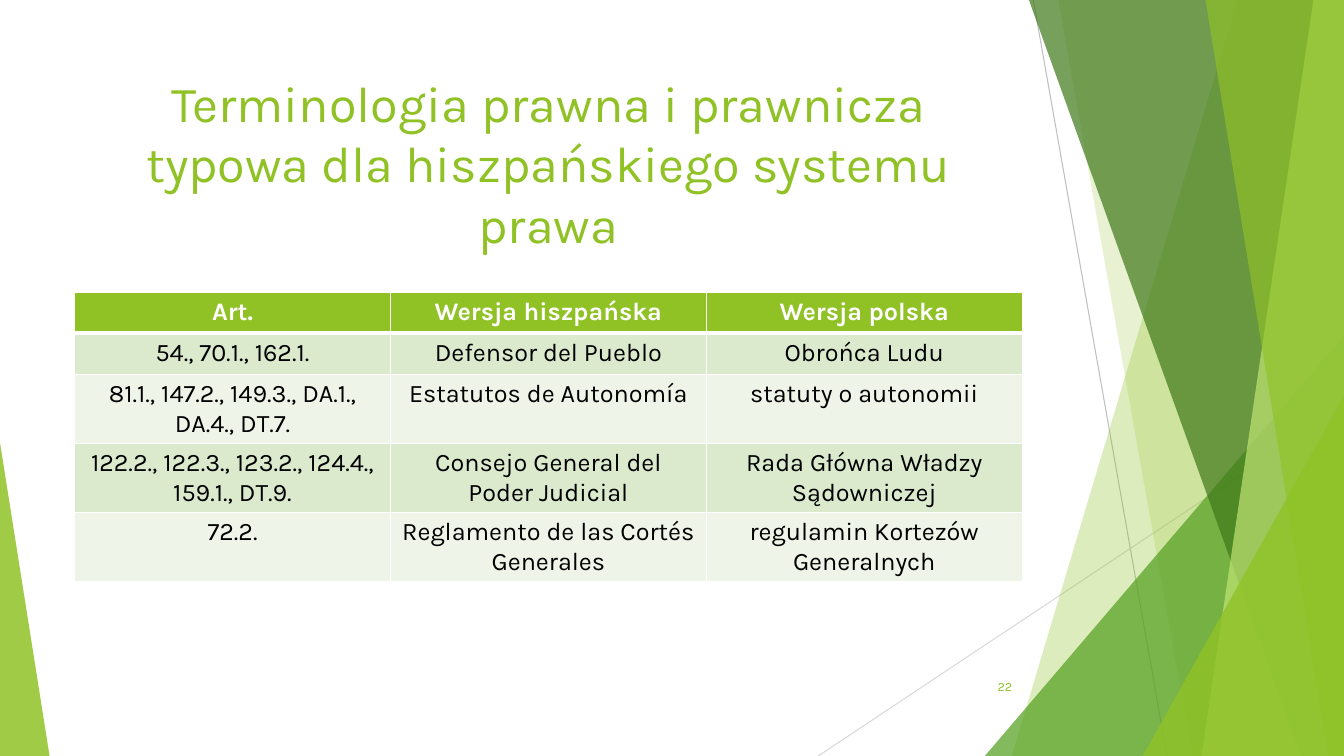
"""Build a slide with a table of Spanish and Polish legal terms."""
from lxml.etree import SubElement as Sub
from pptx import Presentation
from pptx.dml.color import RGBColor
from pptx.enum.shapes import MSO_CONNECTOR as Link, MSO_SHAPE as Shape
from pptx.enum.text import MSO_ANCHOR as Anchor, MSO_AUTO_SIZE as Auto, PP_ALIGN as Align
from pptx.oxml.ns import qn
from pptx.util import Cm, Pt

WHITE = RGBColor(0xFF, 0xFF, 0xFF)
BLACK = RGBColor(0x00, 0x00, 0x00)
GREEN = RGBColor(0x90, 0xC2, 0x26)
LEAF = RGBColor(0x54, 0xA0, 0x21)
DARK = RGBColor(0x3F, 0x78, 0x19)
LIME = RGBColor(0xC0, 0xE4, 0x74)
SAGE = RGBColor(0xDB, 0xE9, 0xCD)
MIST = RGBColor(0xEE, 0xF4, 0xE8)
GREY = RGBColor(0xBF, 0xBF, 0xBF)
PALE = RGBColor(0xD9, 0xD9, 0xD9)
WIDE, HIGH = 33.87, 19.05
LEFT, SPAN = 1.88, 23.88


def write(frame, text, size=18, color=BLACK, bold=False, align=Align.CENTER, anchor=Anchor.TOP):
    frame.word_wrap = True
    frame.vertical_anchor = anchor
    para = frame.paragraphs[0]
    para.alignment = align
    run = para.add_run()
    run.text = text
    font = run.font
    font.name, font.size, font.bold = "Karla", Pt(size), bold
    font.color.rgb = color


def paint(shape, color, alpha):
    shape.shadow.inherit = False
    shape.line.fill.background()
    shape.fill.solid()
    shape.fill.fore_color.rgb = color
    tint = shape.fill._xPr.find(qn("a:solidFill"))[0]
    Sub(tint, qn("a:alpha"), val=str(alpha * 1000))


deck = Presentation()
deck.slide_width, deck.slide_height = Cm(WIDE), Cm(HIGH)
slide = deck.slides.add_slide(deck.slide_layouts[5])
shapes = slide.shapes

rays = [
    (26.04, 0, 29.41, HIGH, GREY),
    (WIDE, 10.24, 20.62, HIGH, PALE),
]
for x1, y1, x2, y2, color in rays:
    ray = shapes.add_connector(Link.STRAIGHT, Cm(x1), Cm(y1), Cm(x2), Cm(y2))
    ray.line.color.rgb = color
    ray.line.width = Pt(0.75)
    Sub(ray._element.spPr, qn("a:effectLst"))

bands = [
    ("band", 31.19, 25.5, GREEN, 30),
    ("band", 26.67, 30.05, GREEN, 20),
    ("peak", 24.82, 8.46, LEAF, 72),
    ("band", 25.93, 32.79, DARK, 70),
    ("band", 33.1, 30.28, LIME, 70),
    ("band", 30.38, 33.48, GREEN, 65),
    ("peak", 28.8, 9.98, GREEN, 80),
]
for kind, a, b, color, alpha in bands:
    if kind == "band":
        path = shapes.build_freeform(Cm(a), Cm(0))
        ends = [(WIDE, 0), (WIDE, HIGH), (b, HIGH)]
        path.add_line_segments([(Cm(x), Cm(y)) for x, y in ends])
        part = path.convert_to_shape()
    else:
        part = shapes.add_shape(
            Shape.ISOSCELES_TRIANGLE, Cm(a), Cm(b), Cm(WIDE - a), Cm(HIGH - b))
        part.adjustments[0] = 1
    paint(part, color, alpha)

wedge = shapes.add_shape(Shape.ISOSCELES_TRIANGLE, Cm(0), Cm(11.15), Cm(1.25), Cm(7.9))
wedge.adjustments[0] = 0
paint(wedge, GREEN, 85)

title = shapes.title
title.left, title.top, title.width, title.height = Cm(LEFT), Cm(1.69), Cm(SPAN), Cm(3.67)
title.text_frame.auto_size = Auto.NONE
write(title.text_frame, "Terminologia prawna i prawnicza typowa dla hiszpańskiego systemu prawa",
      size=36, color=GREEN)

terms = [
    ("Art.", "Wersja hiszpańska", "Wersja polska"),
    ("54., 70.1., 162.1.", "Defensor del Pueblo", "Obrońca Ludu"),
    ("81.1., 147.2., 149.3., DA.1., DA.4., DT.7.", "Estatutos de Autonomía",
     "statuty o autonomii"),
    ("122.2., 122.3., 123.2., 124.4., 159.1., DT.9.", "Consejo General del Poder Judicial",
     "Rada Główna Władzy Sądowniczej"),
    ("72.2.", "Reglamento de las Cortés Generales", "regulamin Kortezów Generalnych"),
]
frame = shapes.add_table(len(terms), 3, Cm(LEFT), Cm(7.37), Cm(SPAN), Cm(7.39))
table = frame.table
for r, texts in enumerate(terms):
    table.rows[r].height = Cm(1.03)
    head = r == 0
    for c, text in enumerate(texts):
        cell = table.cell(r, c)
        write(cell.text_frame, text, color=WHITE if head else BLACK, bold=head)
        props = cell._tc.get_or_add_tcPr()
        for side in "LRTB":
            thick = (r, side) in [(0, "B"), (1, "T")]
            edge = Sub(props, qn("a:ln" + side), w=str(Pt(3 if thick else 1)))
            Sub(Sub(edge, qn("a:solidFill")), qn("a:srgbClr"), val=str(WHITE))
        cell.fill.solid()
        cell.fill.fore_color.rgb = GREEN if head else SAGE if r % 2 else MIST
frame.height = Cm(7.39)

page = shapes.add_textbox(Cm(23.85), Cm(16.79), Cm(1.91), Cm(1.02))
write(page.text_frame, "22", size=9, color=GREEN, align=Align.RIGHT, anchor=Anchor.MIDDLE)

deck.save("out.pptx")
